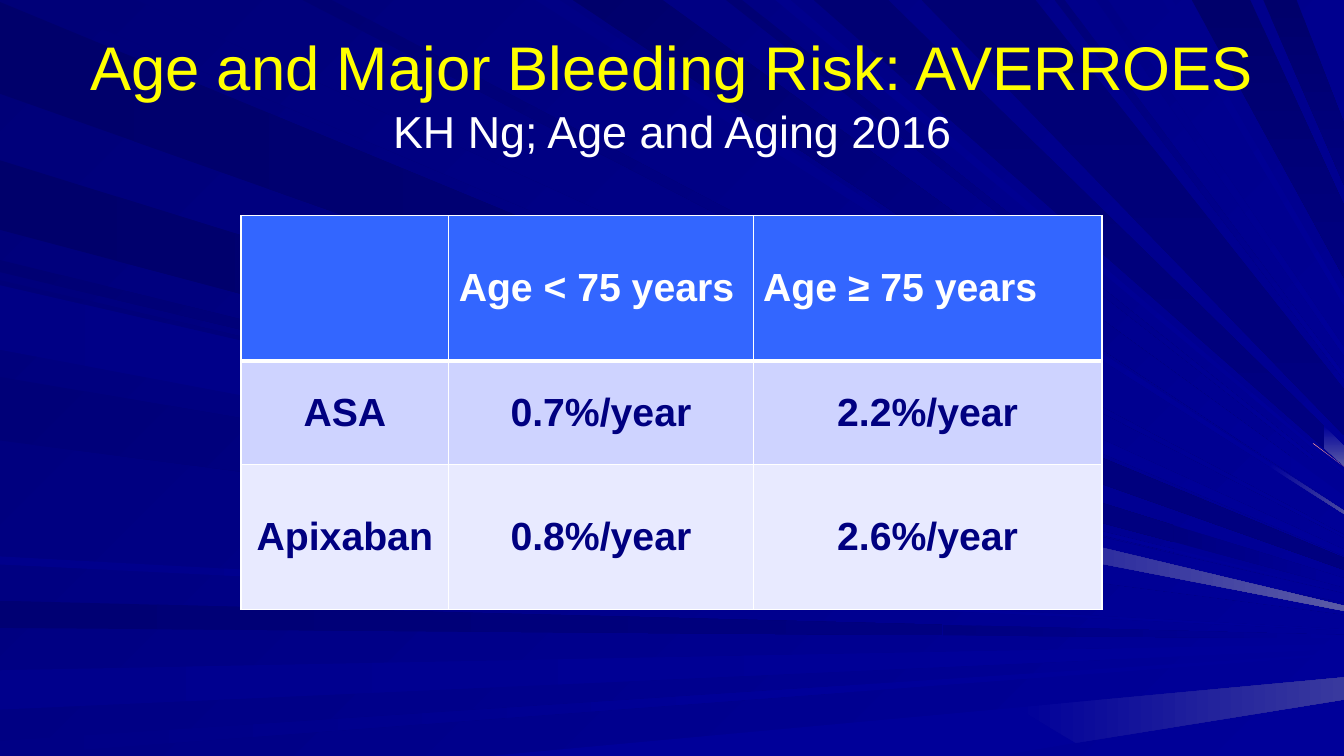
from lxml.etree import SubElement
from pptx import Presentation
from pptx.dml.color import RGBColor
from pptx.enum.text import MSO_ANCHOR as Anchor, MSO_AUTO_SIZE as AutoSize, PP_ALIGN as Align
from pptx.oxml.ns import qn
from pptx.util import Inches, Pt

COLUMNS, ROWS = 13.33, 7.5
FOCUS = (15.3, 6.35)
FONT = "Arial"
YELLOW = RGBColor.from_string("FFFF00")
WHITE = RGBColor.from_string("FFFFFF")
DEEPEST = RGBColor.from_string("00006B")
DEEP = RGBColor.from_string("000073")
NIGHT = RGBColor.from_string("000078")
NAVY = RGBColor.from_string("000080")
ROYAL = RGBColor.from_string("000085")
COBALT = RGBColor.from_string("00008C")
BLUE = RGBColor.from_string("000099")
GLOW = RGBColor.from_string("39399E")
BRIGHT_GLOW = RGBColor.from_string("4A4AA1")
PALE_GLOW = RGBColor.from_string("5A5AA6")
PINK = RGBColor.from_string("FF9999")
HEADER_BLUE = RGBColor.from_string("3366FF")
ROW_BLUE = RGBColor.from_string("CED3FF")
ROW_PALE = RGBColor.from_string("E8EAFF")

LEFT_RAYS = [
    (0.02, 0.93, 0, [(COLUMNS, DEEPEST, NAVY)]),
    (5.96, 6.23, 0, [(9.35, DEEP, NAVY), (COLUMNS, NAVY, BLUE)]),
    (6.65, 7.04, 0, [(11.07, COBALT, BLUE), (COLUMNS, BLUE, BLUE)]),
    (7.35, 7.5, 0, [(8.38, ROYAL, BLUE), (COLUMNS, BLUE, BLUE)]),
    (2.58, 2.7, 45, [(11.64, DEEP, BLUE), (COLUMNS, BLUE, BLUE)]),
    (1.59, 2.28, 0, [(11.64, DEEPEST, NAVY), (COLUMNS, NAVY, BLUE)]),
    (2.78, 3.42, 45, [(COLUMNS, NIGHT, BLUE)]),
    (3.74, 4.37, 45, [(COLUMNS, NIGHT, BLUE)]),
    (5.52, 5.6, 0, [(COLUMNS, COBALT, BLUE)]),
    (2.83, 3.47, 0, [(8.44, ROYAL, BLUE)]),
]
TOP_RAYS = [
    (0.34, 1.35, 45, [(COLUMNS, NIGHT, BLUE)]),
    (5.31, 5.55, 45, [(12.6, ROYAL, BLUE), (COLUMNS, BLUE, BRIGHT_GLOW)]),
    (5.68, 6.57, 45, [(12.8, DEEPEST, BLUE), (COLUMNS, BLUE, BLUE)]),
    (7.2, 7.36, 45, [(13.02, DEEP, BLUE)]),
    (8.07, 8.81, 90, [(13.13, DEEP, NAVY), (COLUMNS, BLUE, PALE_GLOW)]),
    (11.82, 12.4, 90, [(COLUMNS, DEEPEST, NAVY)]),
    (12.53, 12.86, 90, [(COLUMNS, DEEPEST, NAVY)]),
    (3, 3.29, 45, [(COLUMNS, DEEP, BLUE)]),
    (7.69, 7.84, 45, [(COLUMNS, COBALT, BLUE)]),
    (9.14, 10.27, 90, [(COLUMNS, DEEP, NAVY)]),
    (10.46, 10.56, 45, [(COLUMNS, NIGHT, BLUE)]),
    (10.87, 10.99, 45, [(COLUMNS, ROYAL, BLUE)]),
    (11.53, 11.63, 45, [(COLUMNS, COBALT, BLUE)]),
]
GLINTS = [
    (BLUE, BLUE, [(9.9, ROWS), (10.67, 7.37), (10.08, 7.02), (4.85, ROWS)]),
    (BLUE, GLOW, [(COLUMNS, 6.94), (COLUMNS, 6.72), (10.08, 7.02), (10.67, 7.37)]),
    (BLUE, PALE_GLOW, [(COLUMNS, 6.01), (8.5, 4.85), (8.44, 5.11), (COLUMNS, 6.06)]),
    (PINK, PINK, [(COLUMNS, 4.63), (13.02, 4.4), (13.03, 4.4)]),
]

BLEEDING_RATES = [
    ["", "Age < 75 years", "Age ≥ 75 years"],
    ["ASA", "0.7%/year", "2.2%/year"],
    ["Apixaban", "0.8%/year", "2.6%/year"],
]
ROW_STYLES = [
    (HEADER_BLUE, WHITE, Align.LEFT, 1, 3),
    (ROW_BLUE, NAVY, Align.CENTER, 3, 1),
    (ROW_PALE, NAVY, Align.CENTER, 1, 1),
]


def toward_focus(origin, x):
    share = (x - origin[0]) / (FOCUS[0] - origin[0])
    return x, origin[1] + share * (FOCUS[1] - origin[1])


class SlideBuilder:
    def __init__(self, presentation):
        self.column = presentation.slide_width / COLUMNS
        self.row = presentation.slide_height / ROWS
        self.slide = presentation.slides.add_slide(presentation.slide_layouts[5])
        self.backdrop = self.slide.shapes.add_group_shape()
        self.slide.shapes.title.element.addprevious(self.backdrop.element)

    def across(self, columns):
        return round(columns * self.column)

    def down(self, rows):
        return round(rows * self.row)

    def box(self, left, top, width, height):
        return self.across(left), self.down(top), self.across(width), self.down(height)

    def paint(self, fill, start, end, angle):
        if start == end:
            fill.solid()
            fill.fore_color.rgb = start
            return
        fill.gradient()
        fill.gradient_angle = (360 - angle) % 360
        for stop, color in zip(fill.gradient_stops, (start, end)):
            stop.color.rgb = color

    def background(self, start, end, angle):
        self.paint(self.slide.background.fill, start, end, angle)

    def outline(self, points, start, end, angle=0):
        first, *others = [(self.across(x), self.down(y)) for x, y in points]
        builder = self.backdrop.shapes.build_freeform(*first)
        builder.add_line_segments(others, close=True)
        shape = builder.convert_to_shape()
        shape.shadow.inherit = False
        shape.line.fill.background()
        self.paint(shape.fill, start, end, angle)

    def ray(self, origins, angle, pieces):
        near = origins
        for reach, start, end in pieces:
            far = [toward_focus(origin, reach) for origin in origins]
            self.outline([*near, *reversed(far)], start, end, angle)
            near = far

    def run(self, paragraph, text, size, color, bold=False):
        run = paragraph.add_run()
        run.text = text
        font = run.font
        font.name, font.size, font.bold = FONT, Pt(size), bold
        font.color.rgb = color

    def title(self, heading, citation, box):
        title = self.slide.shapes.title
        title.left, title.top, title.width, title.height = self.box(*box)
        frame = title.text_frame
        frame.word_wrap = True
        frame.auto_size = AutoSize.NONE
        frame.vertical_anchor = Anchor.MIDDLE
        paragraph = frame.paragraphs[0]
        paragraph.alignment = Align.CENTER
        self.run(paragraph, heading, 44, YELLOW)
        paragraph.add_line_break()
        self.run(paragraph, citation, 32, WHITE)

    def border(self, cell, side, width):
        properties = cell._tc.get_or_add_tcPr()
        line = SubElement(properties, qn(f"a:ln{side}"), w=str(Pt(width)))
        fill = SubElement(line, qn("a:solidFill"))
        SubElement(fill, qn("a:srgbClr"), val=str(WHITE))

    def table(self, values, styles, left, top, widths, heights):
        box = self.box(left, top, sum(widths), sum(heights))
        table = self.slide.shapes.add_table(len(heights), len(widths), *box).table
        for column, width in zip(table.columns, widths):
            column.width = self.across(width)
        for row, height, texts, style in zip(table.rows, heights, values, styles):
            row.height = self.down(height)
            fill, color, alignment, above, below = style
            for cell, text in zip(row.cells, texts):
                for side, thickness in zip("LRTB", (1, 1, above, below)):
                    self.border(cell, side, thickness)
                cell.fill.solid()
                cell.fill.fore_color.rgb = fill
                cell.vertical_anchor = Anchor.MIDDLE
                paragraph = cell.text_frame.paragraphs[0]
                paragraph.alignment = alignment
                if text:
                    self.run(paragraph, text, 28, color, bold=True)


def main():
    presentation = Presentation()
    presentation.slide_width = Inches(COLUMNS)
    presentation.slide_height = Inches(ROWS)
    builder = SlideBuilder(presentation)
    builder.background(NIGHT, BLUE, 45)
    for upper, lower, angle, pieces in LEFT_RAYS:
        builder.ray([(0, upper), (0, lower)], angle, pieces)
    for left, right, angle, pieces in TOP_RAYS:
        builder.ray([(left, 0), (right, 0)], angle, pieces)
    for start, end, points in GLINTS:
        builder.outline(points, start, end)
    builder.title("Age and Major Bleeding Risk: AVERROES", "KH Ng; Age and Aging 2016", (0.67, 0.3, 12, 1.25))
    builder.table(BLEEDING_RATES, ROW_STYLES, 2.39, 2.14, [2.06, 3.02, 3.46], [1.44, 1.03, 1.44])
    presentation.save("out.pptx")


if __name__ == "__main__":
    main()
